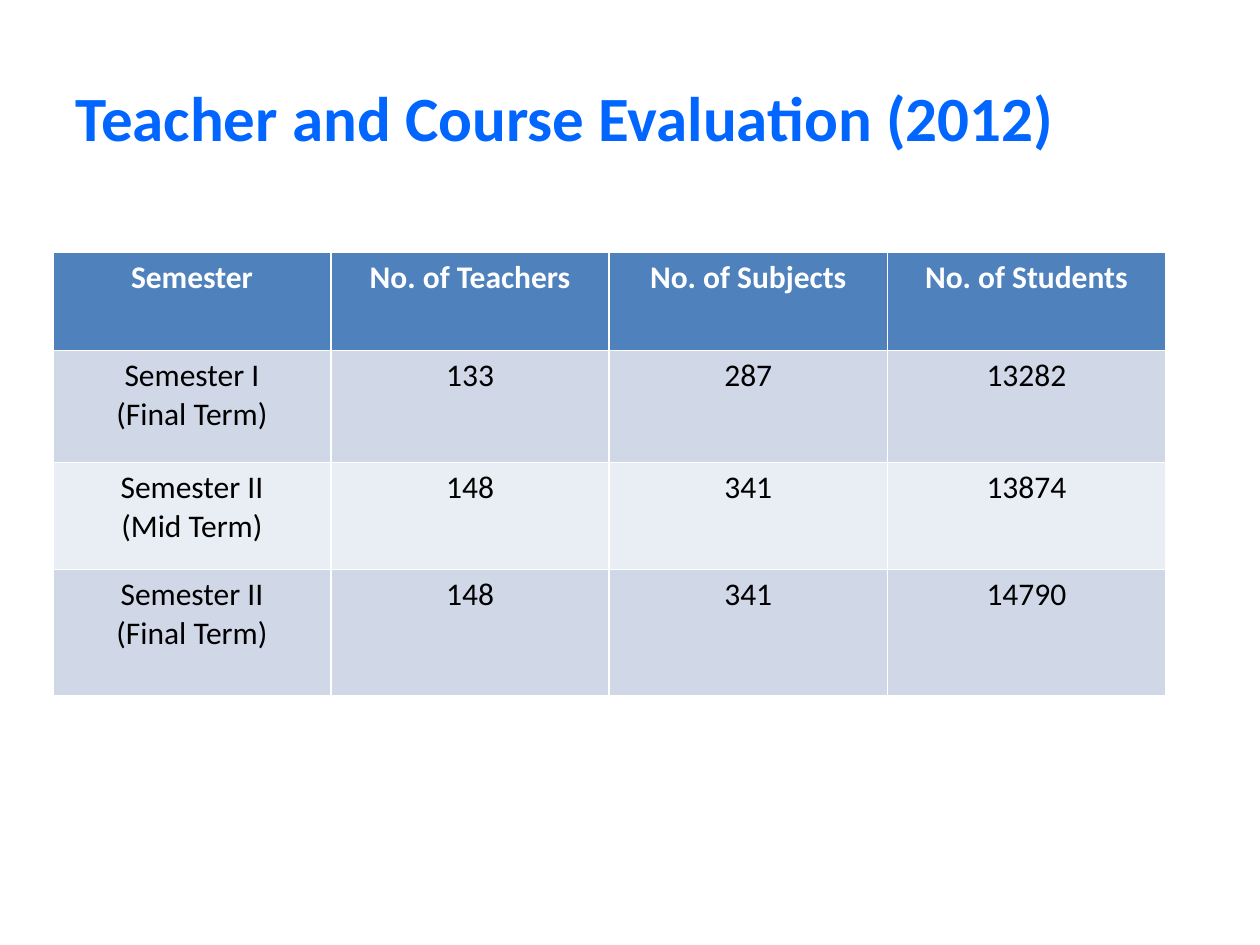
import pptx
import pptx.util
import pptx.dml.color
import pptx.enum.text

Inches = pptx.util.Inches
ALIGN = pptx.enum.text.PP_ALIGN

COLORS = {
    "title": "0066FF",
    "header": "4F81BD",
    "header_text": "FFFFFF",
    "odd_row": "D0D8E8",
    "even_row": "E9EDF4",
    "body_text": "000000",
}
TITLE = "Teacher and Course Evaluation (2012)"
ROWS = [
    ["Semester", "No. of Teachers", "No. of Subjects", "No. of Students"],
    ["Semester I\n(Final Term)", "133", "287", "13282"],
    ["Semester II\n(Mid Term)", "148", "341", "13874"],
    ["Semester II\n(Final Term)", "148", "341", "14790"],
]
ROW_HEIGHTS = [0.78, 0.89, 0.85, 1]


def color(name):
    return pptx.dml.color.RGBColor.from_string(COLORS[name])


def write(frame, text, size, bold, color_name, alignment):
    frame.text = text
    font_format = {"name": "Calibri", "size": pptx.util.Pt(size), "bold": bold}
    for para in frame.paragraphs:
        para.alignment = alignment
        for span in para.runs:
            for name, value in font_format.items():
                setattr(span.font, name, value)
            span.font.color.rgb = color(color_name)


def add_title(page, left, top, width, height):
    box = page.shapes.add_textbox(
        Inches(left), Inches(top), Inches(width), Inches(height)
    )
    frame = box.text_frame
    frame_format = {
        "word_wrap": True,
        "vertical_anchor": pptx.enum.text.MSO_ANCHOR.MIDDLE,
    }
    for name, value in frame_format.items():
        setattr(frame, name, value)
    write(frame, TITLE, 36, True, "title", ALIGN.LEFT)


def add_evaluation_table(page, left, top, width, height):
    table = page.shapes.add_table(
        len(ROWS), len(ROWS[0]),
        Inches(left), Inches(top), Inches(width), Inches(height),
    ).table
    for row, share in zip(table.rows, ROW_HEIGHTS):
        row.height = Inches(height * share / sum(ROW_HEIGHTS))
    for row_index, texts in enumerate(ROWS):
        header = row_index == 0
        band = "odd_row" if row_index % 2 else "even_row"
        for column_index, text in enumerate(texts):
            cell = table.cell(row_index, column_index)
            cell.fill.solid()
            cell.fill.fore_color.rgb = color("header" if header else band)
            text_color = "header_text" if header else "body_text"
            write(cell.text_frame, text, 18, header, text_color, ALIGN.CENTER)


def main():
    deck = pptx.Presentation()
    deck.slide_width = Inches(10)
    deck.slide_height = Inches(7.5)
    page = deck.slides.add_slide(deck.slide_layouts[6])
    add_title(page, 0.5, 0.3, 9, 1.25)
    add_evaluation_table(page, 0.42, 2, 8.83, 3.52)
    deck.save("out.pptx")


if __name__ == "__main__":
    main()
